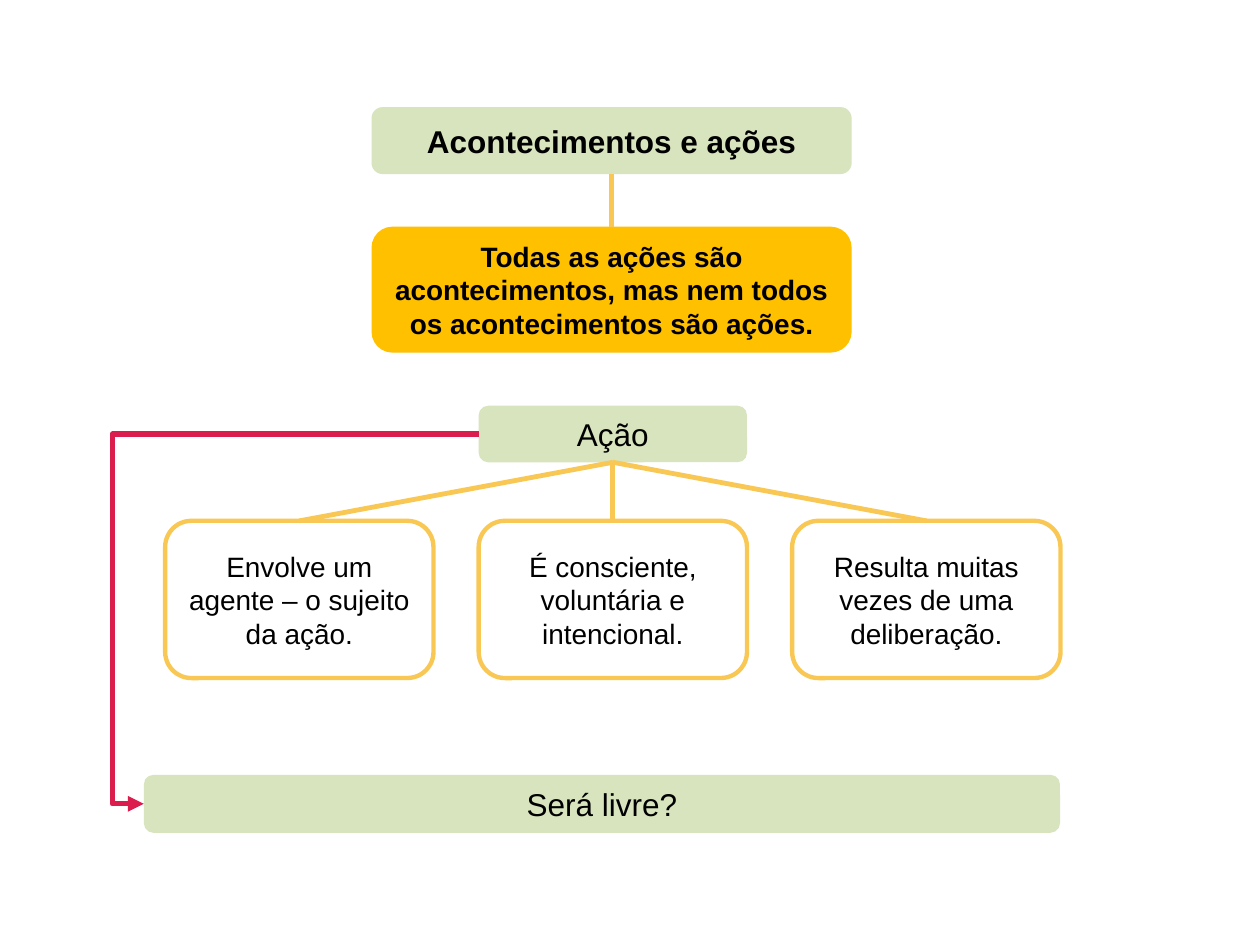
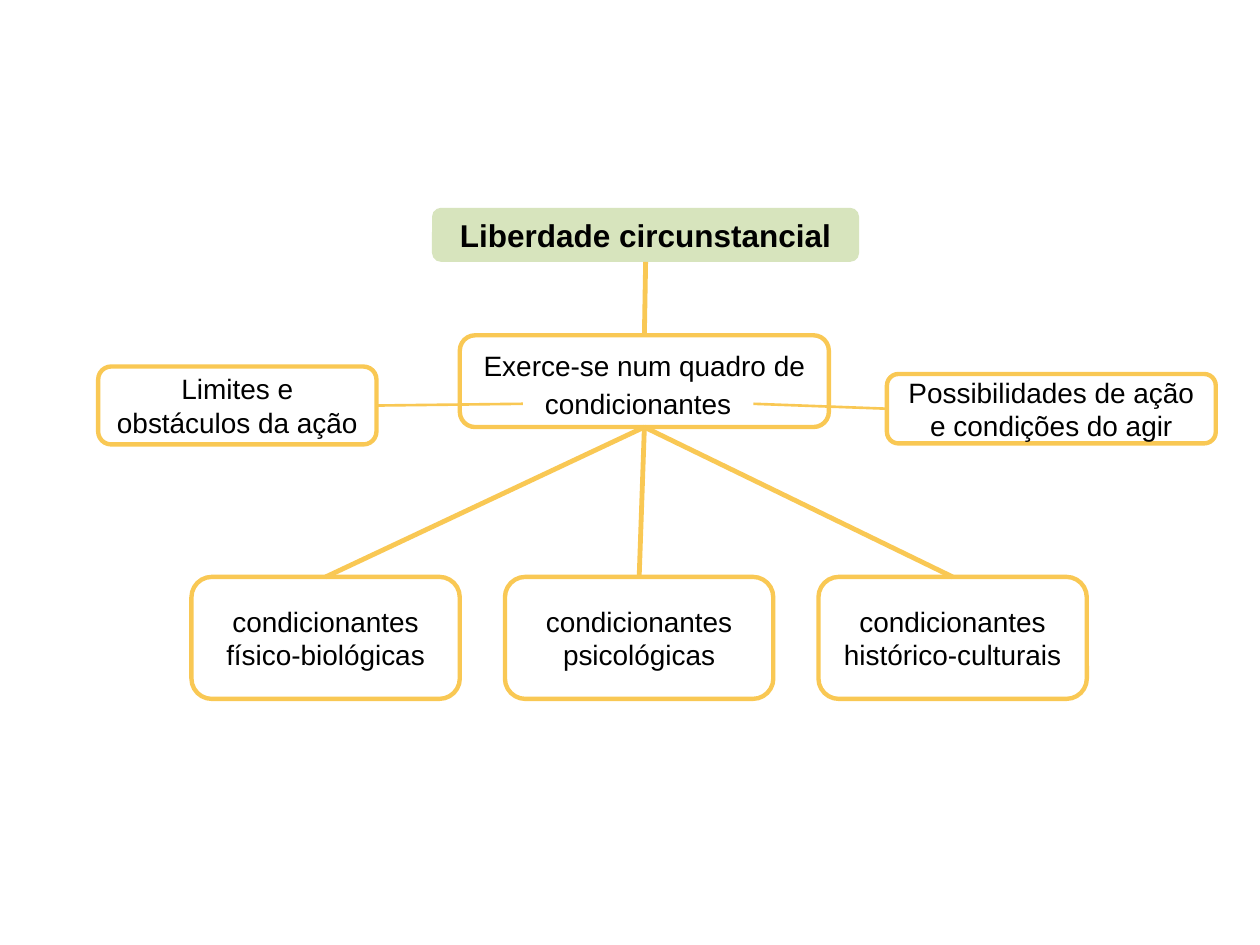
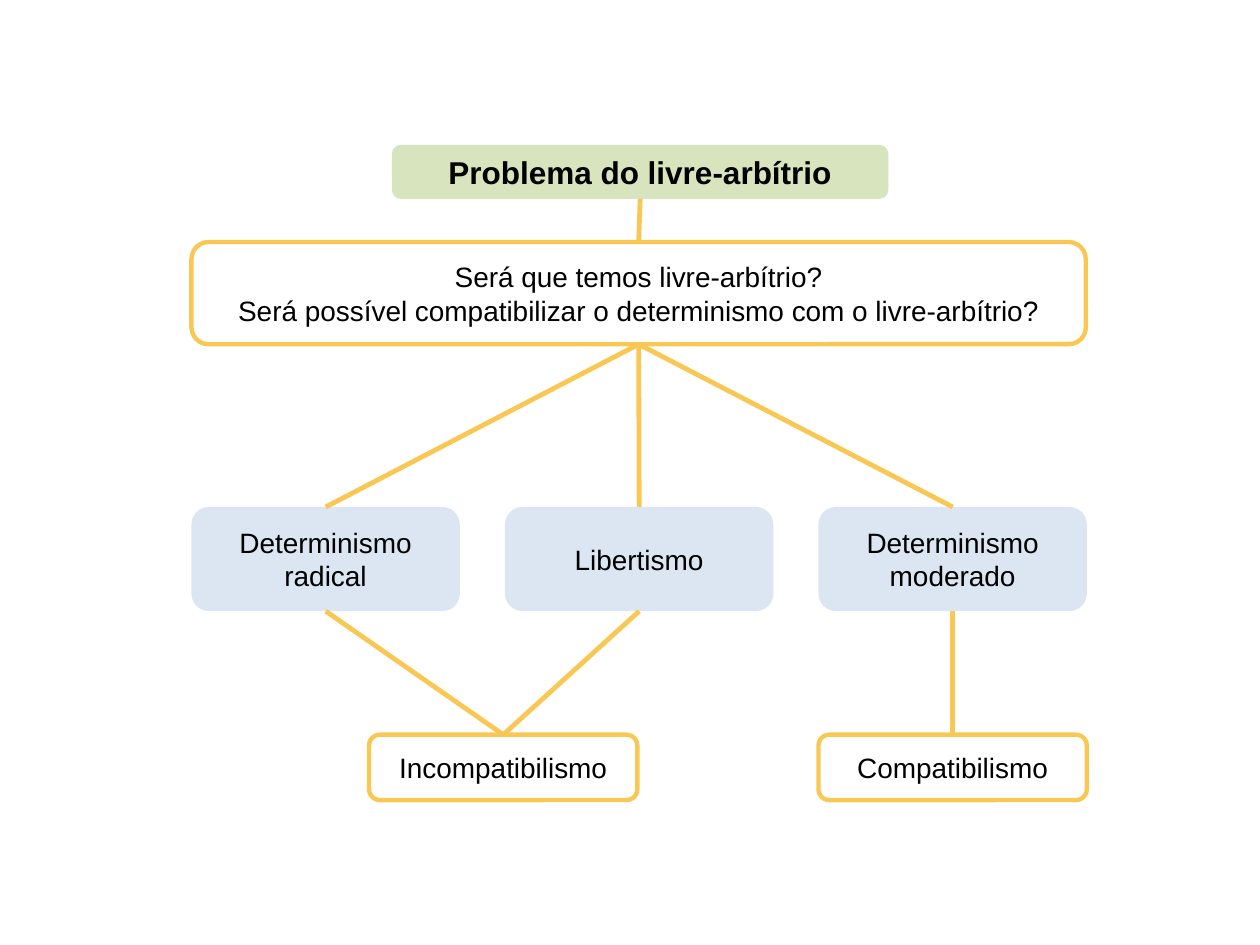
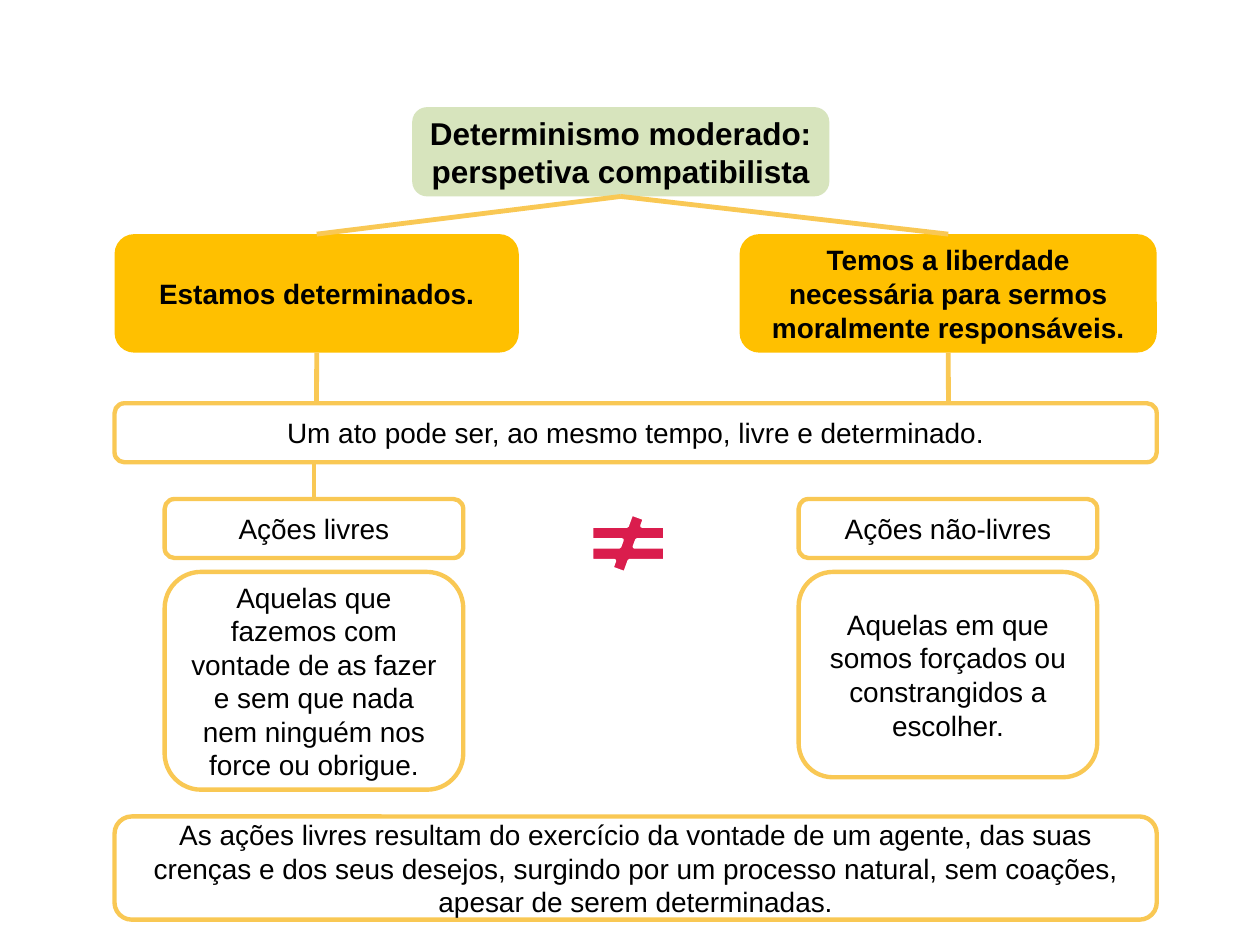
from lxml import etree
from pptx import Presentation
from pptx.dml.color import RGBColor
from pptx.enum.shapes import MSO_CONNECTOR, MSO_SHAPE
from pptx.enum.text import MSO_ANCHOR, PP_ALIGN
from pptx.oxml.ns import qn
from pptx.util import Cm, Pt

ROUNDED = MSO_SHAPE.ROUNDED_RECTANGLE
NOT_EQUAL = MSO_SHAPE.MATH_NOT_EQUAL
STRAIGHT = MSO_CONNECTOR.STRAIGHT
ELBOW = MSO_CONNECTOR.ELBOW
MIDDLE = MSO_ANCHOR.MIDDLE
CENTER = PP_ALIGN.CENTER
TOP, LEFT, BOTTOM, RIGHT = range(4)

# Shared look
FONT = "Arial"
COLORS = {
    "text": "000000", "white": "FFFFFF", "green": "D7E4BD", "amber": "FFC000",
    "blue": "DCE6F2", "gold": "F9C854", "red": "DA1D4D",
}
STYLES = {
    "title": dict(fill="green", size=18, bold=True),
    "topic": dict(fill="green", size=18),
    "thesis": dict(fill="amber", bold=True),
    "outline": dict(fill="white", line="gold"),
    "theory": dict(fill="blue"),
    "label": dict(fill="white"),
    "lead": dict(fill="white", line="gold", bottom=0.76),
}
COLUMN_WIDTH, COLUMN_PITCH = 5.41, 6.32

# Content, in centimetres. Boxes: name, style, (left, top, width, height), text
# Links: start, end, width in points; an end is (name, side) or (x, y)
SLIDES = [
    {
        "boxes": [
            ("title", "title", (7.49, 2.16, 9.68, 1.35), "Acontecimentos e ações"),
            ("thesis", "thesis", (7.49, 4.57, 9.68, 2.54),
             "Todas as ações são acontecimentos, mas nem todos os acontecimentos são ações."),
            ("action", "topic", (9.65, 8.18, COLUMN_WIDTH, 1.14), "Ação"),
            ("question", "topic", (2.9, 15.62, 18.47, 1.17), "Será livre?"),
        ],
        "row": dict(parent="action", style="outline", left=3.33, top=10.5, height=3.17, items=[
            ("agent", "Envolve um agente – o sujeito da ação."),
            ("conscious", "É consciente, voluntária e intencional."),
            ("deliberation", "Resulta muitas vezes de uma deliberação."),
        ]),
        "links": [(("title", BOTTOM), ("thesis", TOP), 2.75)],
        "arrow": (("action", LEFT), ("question", LEFT), 1.094),
    },
    {
        "boxes": [
            ("title", "title", (8.71, 4.19, 8.61, 1.09), "Liberdade circunstancial"),
            ("frame", "lead", (9.27, 6.76, 7.44, 1.85), "Exerce-se num quadro de"),
            ("limits", "outline", (1.98, 7.39, 5.61, 1.57), "Limites e obstáculos da ação"),
            ("possibilities", "outline", (17.88, 7.54, 6.63, 1.4),
             "Possibilidades de ação e condições do agir"),
            ("conditions", "label", (10.54, 7.77, 4.65, 0.74), "condicionantes"),
        ],
        "row": dict(parent="frame", style="outline", left=3.86, top=11.63, height=2.46, items=[
            ("biological", "condicionantes físico-biológicas"),
            ("psychological", "condicionantes psicológicas"),
            ("cultural", "condicionantes histórico-culturais"),
        ]),
        "links": [
            (("title", BOTTOM), ("frame", TOP), 2.75),
            (("possibilities", LEFT), ("conditions", RIGHT), 1.5),
            (("conditions", LEFT), ("limits", RIGHT), 1.5),
        ],
    },
    {
        "boxes": [
            ("title", "title", (7.9, 2.92, 10.01, 1.09), "Problema do livre-arbítrio"),
            ("questions", "outline", (3.86, 4.88, 18.03, 2.06),
             "Será que temos livre-arbítrio?\n"
             "Será possível compatibilizar o determinismo com o livre-arbítrio?"),
            ("incompatibilism", "outline", (7.44, 14.81, COLUMN_WIDTH, 1.32), "Incompatibilismo"),
            ("compatibilism", "outline", (16.5, 14.81, COLUMN_WIDTH, 1.32), "Compatibilismo"),
        ],
        "row": dict(parent="questions", style="theory", left=3.86, top=10.22, height=2.1, items=[
            ("radical", "Determinismo radical"),
            ("libertarianism", "Libertismo"),
            ("moderate", "Determinismo moderado"),
        ]),
        "links": [
            (("title", BOTTOM), ("questions", TOP), 2.75),
            (("incompatibilism", TOP), ("libertarianism", BOTTOM), 2.75),
            (("incompatibilism", TOP), ("radical", BOTTOM), 2.75),
            (("compatibilism", TOP), ("moderate", BOTTOM), 2.75),
        ],
    },
    {
        "boxes": [
            ("determined", "thesis", (2.31, 4.72, 8.15, 2.39), "Estamos determinados."),
            ("title", "title", (8.31, 2.16, 8.41, 1.8),
             "Determinismo moderado: perspetiva compatibilista"),
            ("act", "outline", (2.31, 8.13, 21.01, 1.19),
             "Um ato pode ser, ao mesmo tempo, livre e determinado."),
            ("freedom", "thesis", (14.91, 4.72, 8.41, 2.39),
             "Temos a liberdade necessária para sermos moralmente responsáveis."),
            ("unfree", "outline", (16.1, 10.06, 6.02, 1.19), "Ações não-livres"),
            ("free", "outline", (3.32, 10.06, 6.02, 1.19), "Ações livres"),
            ("free meaning", "outline", (3.32, 11.53, 6.02, 4.39),
             "Aquelas que fazemos com vontade de as fazer e sem que nada nem ninguém "
             "nos force ou obrigue."),
            ("unfree meaning", "outline", (16.1, 11.53, 6.02, 4.14),
             "Aquelas em que somos forçados ou constrangidos a escolher."),
            ("conclusion", "outline", (2.31, 16.46, 21.01, 2.08),
             "As ações livres resultam do exercício da vontade de um agente, das suas crenças "
             "e dos seus desejos, surgindo por um processo natural, sem coações, apesar de "
             "serem determinadas."),
        ],
        "links": [
            (("title", BOTTOM), ("determined", TOP), 2.75),
            (("title", BOTTOM), ("freedom", TOP), 2.75),
            (("determined", BOTTOM), (6.38, 8.13), 2.75),
            (("freedom", BOTTOM), (19.12, 8.13), 2.75),
            ((6.33, 9.32), ("free", TOP), 2.75),
        ],
        "not_equal": (11.66, 10.36, 2.01, 1.19),
    },
]


def color(name):
    return RGBColor.from_string(COLORS[name])


def add_figure(slide, kind, place, fill, line=None, line_width=2.5):
    shape = slide.shapes.add_shape(kind, *(Cm(value) for value in place))
    shape.shadow.inherit = False
    shape.fill.solid()
    shape.fill.fore_color.rgb = color(fill)
    if line:
        shape.line.color.rgb = color(line)
        shape.line.width = Pt(line_width)
    else:
        shape.line.fill.background()
    return shape


def write_text(shape, text, size=16, bold=False, bottom=None):
    frame = shape.text_frame
    frame.word_wrap = True
    frame.vertical_anchor = MIDDLE
    if bottom is not None:
        frame.margin_bottom = Cm(bottom)
    frame.text = text
    for paragraph in frame.paragraphs:
        paragraph.alignment = CENTER
        font = paragraph.runs[0].font
        font.name, font.size, font.bold = FONT, Pt(size), bold
        font.color.rgb = color("text")


def add_box(slide, style, place, text):
    options = dict(STYLES[style])
    shape = add_figure(slide, ROUNDED, place, options.pop("fill"), options.pop("line", None))
    write_text(shape, text, **options)
    return shape


def add_link(slide, boxes, start, end, width, kind=STRAIGHT, line="gold"):
    joined = [isinstance(spot[0], str) for spot in (start, end)]
    points = [(0, 0) if is_joined else spot for spot, is_joined in zip((start, end), joined)]
    connector = slide.shapes.add_connector(kind, *(Cm(v) for point in points for v in point))
    if joined[0]:
        connector.begin_connect(boxes[start[0]], start[1])
    if joined[1]:
        connector.end_connect(boxes[end[0]], end[1])
    connector.line.color.rgb = color(line)
    connector.line.width = Pt(width)
    etree.SubElement(connector._element.spPr, qn("a:effectLst"))
    return connector


def add_elbow_arrow(slide, boxes, start, end, bend):
    connector = add_link(slide, boxes, start, end, 3, kind=ELBOW, line="red")
    properties = connector._element.spPr
    guides = properties.find(qn("a:prstGeom")).get_or_add_avLst()
    etree.SubElement(guides, qn("a:gd"), name="adj1", fmla=f"val {round(bend * 100000)}")
    etree.SubElement(properties.find(qn("a:ln")), qn("a:tailEnd"), type="triangle")


def build_slide(presentation, content):
    slide = presentation.slides.add_slide(presentation.slide_layouts[6])
    boxes = {name: add_box(slide, style, place, text)
             for name, style, place, text in content["boxes"]}
    links = list(content["links"])

    # Row of equal columns, each joined to its parent
    if "row" in content:
        row = content["row"]
        for index, (name, text) in enumerate(row["items"]):
            place = (row["left"] + index * COLUMN_PITCH, row["top"], COLUMN_WIDTH, row["height"])
            boxes[name] = add_box(slide, row["style"], place, text)
            links.append(((row["parent"], BOTTOM), (name, TOP), 2.75))

    # Lines and marks
    for link in links:
        add_link(slide, boxes, *link)
    if "arrow" in content:
        add_elbow_arrow(slide, boxes, *content["arrow"])
    if "not_equal" in content:
        add_figure(slide, NOT_EQUAL, content["not_equal"], "red", "white", 2)


def main():
    presentation = Presentation()
    presentation.slide_width, presentation.slide_height = Cm(25.4), Cm(19.05)
    for content in SLIDES:
        build_slide(presentation, content)
    presentation.save("out.pptx")


if __name__ == "__main__":
    main()
